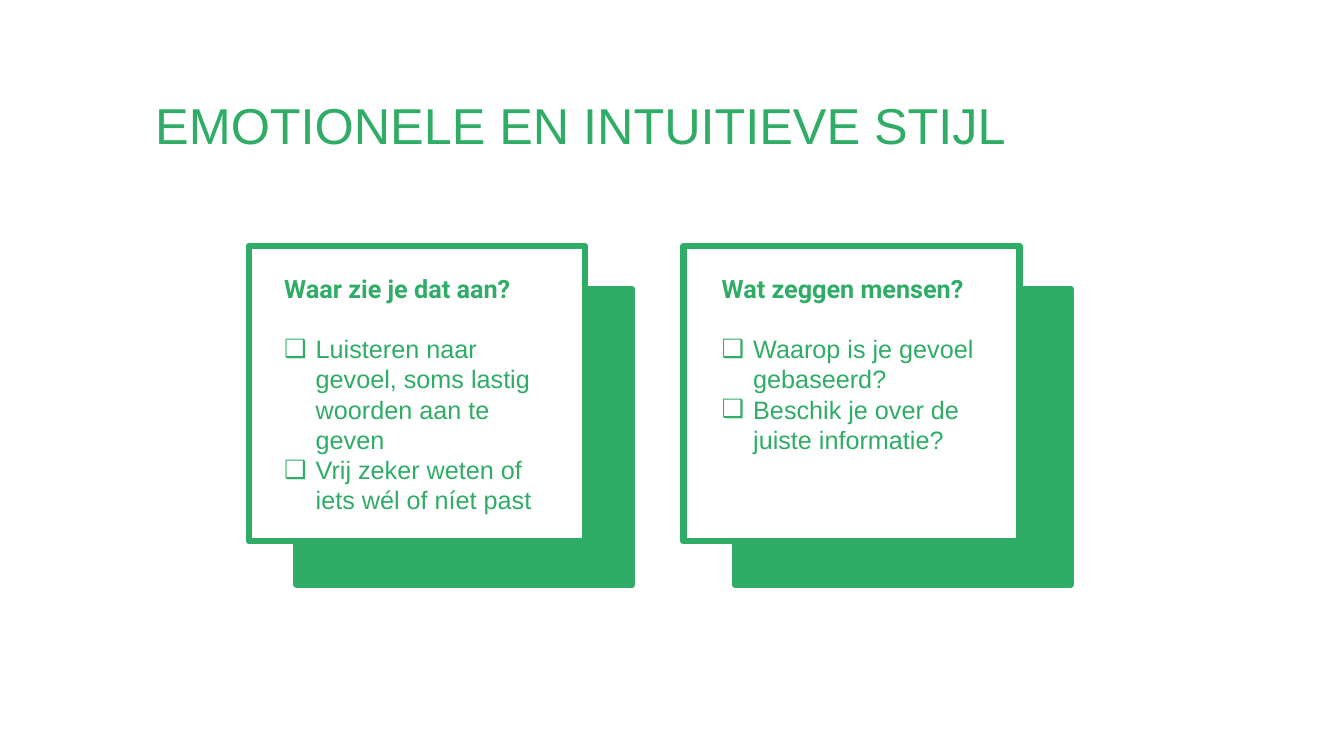
from lxml import etree
from pptx import Presentation
from pptx.dml.color import RGBColor
from pptx.enum.shapes import MSO_SHAPE
from pptx.enum.text import MSO_ANCHOR, MSO_AUTO_SIZE, PP_ALIGN
from pptx.oxml.ns import qn
from pptx.util import Pt

RECT = MSO_SHAPE.RECTANGLE
TOP = MSO_ANCHOR.TOP
NO_FIT = MSO_AUTO_SIZE.NONE
LEFT = PP_ALIGN.LEFT

COLORS = {"green": "2FAC66", "white": "FFFFFF"}
TWO_CONTENT = 3
CARD_W, CARD_H = 240, 211
SHADOW_TOP, CARD_TOP, TEXT_TOP = 206.6, 175.7, 191.5
CARDS = [
    {"left": 177.8, "shadow": 211.7, "text": (195.8, 199.4, 203.8),
     "heading": "Waar zie je dat aan?",
     "items": ["Luisteren naar gevoel, soms lastig woorden aan te geven",
               "Vrij zeker weten of iets wél of níet past"]},
    {"left": 488.2, "shadow": 524.9, "text": (508.3, 219.6, 138.2),
     "heading": "Wat zeggen mensen?",
     "items": ["Waarop is je gevoel gebaseerd?",
               "Beschik je over de juiste informatie?"]},
]


class SlideBuilder:
    """Holds the colours and the current slide, and adds its elements."""

    def __init__(self, prs):
        self.s = prs.slides.add_slide(prs.slide_layouts[TWO_CONTENT])

    def color(self, name):
        return RGBColor.from_string(COLORS[name])

    def rect(self, left, top, fill):
        sp = self.s.shapes.add_shape(RECT, Pt(left), Pt(top), Pt(CARD_W), Pt(CARD_H))
        sp.shadow.inherit = False
        sp.fill.solid()
        sp.fill.fore_color.rgb = self.color(fill)
        sp.line.color.rgb = self.color("green")
        sp.line.width = Pt(4.5)

    def place(self, idx, left, top, width, height):
        sp = self.s.placeholders[idx]
        sp.left, sp.top, sp.width, sp.height = Pt(left), Pt(top), Pt(width), Pt(height)
        self.s.shapes.element.append(sp.element)
        tf = sp.text_frame
        tf.word_wrap = True
        tf.auto_size = NO_FIT
        tf.vertical_anchor = TOP
        return tf

    def format(self, p, font, size, bold=False, before=0):
        p.alignment = LEFT
        p.space_before = Pt(before)
        for r in p.runs:
            r.font.name = font
            r.font.size = Pt(size)
            r.font.bold = bold
            r.font.color.rgb = self.color("green")

    def bullet(self, p, char=None):
        pPr = p._p.get_or_add_pPr()
        indent = Pt(22.5) if char else 0
        pPr.set("marL", str(indent))
        pPr.set("indent", str(-indent))
        if char:
            etree.SubElement(pPr, qn("a:buChar")).set("char", char)
        else:
            etree.SubElement(pPr, qn("a:buNone"))

    def title(self, text):
        tf = self.place(0, 103.7, 63.4, 808.6, 51.1)
        tf.text = text
        self.format(tf.paragraphs[0], "Arial", 36)

    def card_text(self, idx, left, width, height, heading, items):
        tf = self.place(idx, left, TEXT_TOP, width, height)
        tf.text = heading
        p = tf.paragraphs[0]
        self.bullet(p)
        self.format(p, "Roboto", 18, bold=True)
        for i, item in enumerate(items):
            p = tf.add_paragraph()
            p.text = item
            self.bullet(p, "❑")
            self.format(p, "Arial", 18, before=0 if i else 21.5)


def main():
    prs = Presentation()
    prs.slide_width, prs.slide_height = Pt(960), Pt(540)
    slide = SlideBuilder(prs)
    for card in CARDS:
        slide.rect(card["shadow"], SHADOW_TOP, "green")
    for card in CARDS:
        slide.rect(card["left"], CARD_TOP, "white")
    slide.title("EMOTIONELE EN INTUITIEVE STIJL")
    for idx, card in enumerate(CARDS, 1):
        slide.card_text(idx, *card["text"], card["heading"], card["items"])
    prs.save("out.pptx")


if __name__ == "__main__":
    main()
